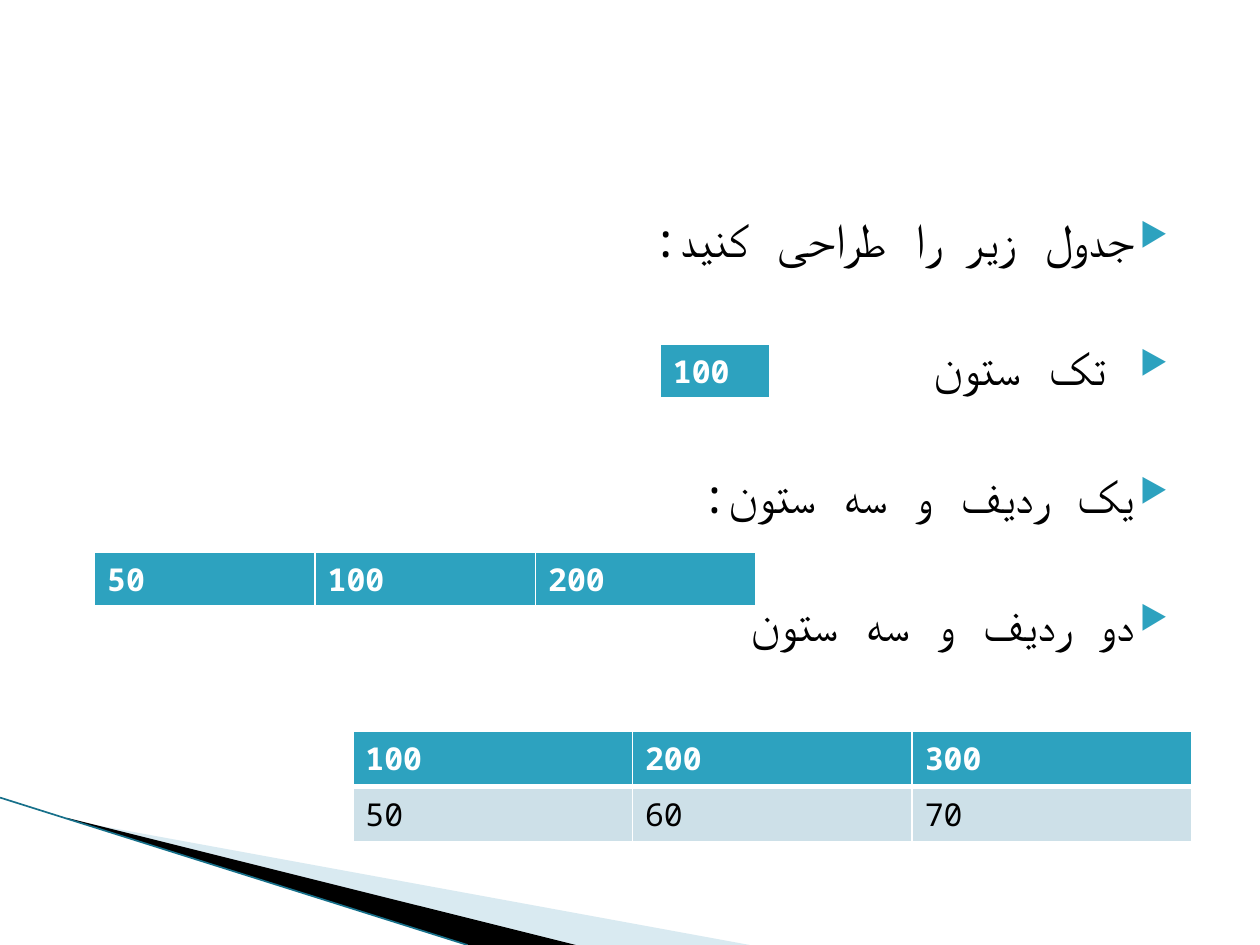
"""Build a right-to-left slide of table design exercises."""
from lxml import etree
from pptx import Presentation
from pptx.dml.color import RGBColor
from pptx.enum.text import MSO_ANCHOR, PP_ALIGN
from pptx.oxml import parse_xml
from pptx.oxml.ns import nsdecls, qn
from pptx.util import Inches, Pt

RIGHT = PP_ALIGN.RIGHT
TOP = MSO_ANCHOR.TOP
THEME = {
    "font": "Noto Sans Mono", "body_size": Pt(27), "cell_size": Pt(18),
    "line_height": Pt(32.5), "gap": Pt(40.5),
    "accent": "2DA2BF", "band": "CDE0E8", "ribbon": "A0CBDC",
    "edge": "17708A", "dark": "000000", "light": "FFFFFF",
}

deck = Presentation()
deck.slide_width, deck.slide_height = Inches(10), Inches(7.5)
slide = deck.slides.add_slide(deck.slide_layouts[6])
column, row = deck.slide_width / 100, deck.slide_height / 75


def place(*lengths):
    return [round(length * (row if i % 2 else column)) for i, length in enumerate(lengths)]


def style_run(run, size, colour, bold=False):
    run.font.name, run.font.size, run.font.bold = THEME["font"], size, bold
    run.font.color.rgb = RGBColor.from_string(THEME[colour])
    complex_font = etree.SubElement(run.font._element, qn("a:cs"))
    complex_font.set("typeface", THEME["font"])


ribbons = [
    ([(5.5, 65.1), (59.5, 75), (45.6, 75), (5.5, 65)], "ribbon", 40),
    ([(5.3, 64.9), (45.7, 75), (37.2, 75), (5.4, 65)], "dark", 100),
]
for corners, colour, opacity in ribbons:
    points = [place(*corner) for corner in corners]
    outline = slide.shapes.build_freeform(*points[0], scale=1.0)
    outline.add_line_segments(points[1:], close=True)
    ribbon = outline.convert_to_shape()
    ribbon.shadow.inherit = False
    ribbon.line.fill.background()
    ribbon.fill.solid()
    ribbon.fill.fore_color.rgb = RGBColor.from_string(THEME[colour])
    if opacity < 100:
        tint = ribbon._element.spPr.find(".//" + qn("a:srgbClr"))
        etree.SubElement(tint, qn("a:alpha")).set("val", str(opacity * 1000))

edge = slide.shapes.add_connector(1, *place(0, 63.3, 37.1, 75))
edge.line.color.rgb = RGBColor.from_string(THEME["edge"])
edge.line.width = Pt(0.95)
etree.SubElement(edge._element.spPr, qn("a:effectLst"))

tasks = ["جدول زیر را طراحی کنید:", " تک ستون", "یک ردیف و سه ستون:", "دو ردیف و سه ستون"]
body = slide.shapes.add_textbox(*place(5, 16.2, 90, 49.5)).text_frame
body.word_wrap = True
body.vertical_anchor = TOP
body.text = "\n".join(tasks)
bullet_parts = [
    f'<a:buClr {nsdecls("a")}><a:srgbClr val="{THEME["accent"]}"/></a:buClr>',
    f'<a:buSzPct {nsdecls("a")} val="68000"/>',
    f'<a:buChar {nsdecls("a")} char="▶"/>',
]
for index, task in enumerate(body.paragraphs):
    properties = task._p.get_or_add_pPr()
    for name, value in (("marL", Inches(0.4)), ("marR", 0), ("indent", Inches(-0.28)), ("rtl", 1)):
        properties.set(name, str(value))
    for part in bullet_parts:
        properties.append(parse_xml(part))
    task.alignment = RIGHT
    task.line_spacing = THEME["line_height"]
    if index:
        task.space_before = THEME["gap"]
    style_run(task.runs[0], THEME["body_size"], "dark")

row_height = 4.4
tables = [
    (52.4, 27.3, 8.7, [["100"]]),
    (7.5, 43.8, 17.5, [["50", "100", "200"]]),
    (28, 58, 22.2, [["100", "200", "300"], ["50", "60", "70"]]),
]
for left, top, cell_width, values in tables:
    rows, columns = len(values), len(values[0])
    bounds = place(left, top, cell_width * columns, row_height * rows)
    table = slide.shapes.add_table(rows, columns, *bounds).table
    for r, line in enumerate(values):
        header = r == 0
        for c, value in enumerate(line):
            cell = table.cell(r, c)
            cell.text = value
            style_run(cell.text_frame.paragraphs[0].runs[0], THEME["cell_size"],
                      "light" if header else "dark", header)
            cell.fill.solid()
            cell.fill.fore_color.rgb = RGBColor.from_string(THEME["accent" if header else "band"])
            sides = {"L": 1, "R": 1, "T": 1 if header else 3, "B": 3 if header else 1}
            for position, (side, weight) in enumerate(sides.items()):
                border = parse_xml(
                    f'<a:ln{side} {nsdecls("a")} w="{Pt(weight)}"><a:solidFill>'
                    f'<a:srgbClr val="{THEME["light"]}"/></a:solidFill></a:ln{side}>')
                cell._tc.tcPr.insert(position, border)

deck.save("out.pptx")
